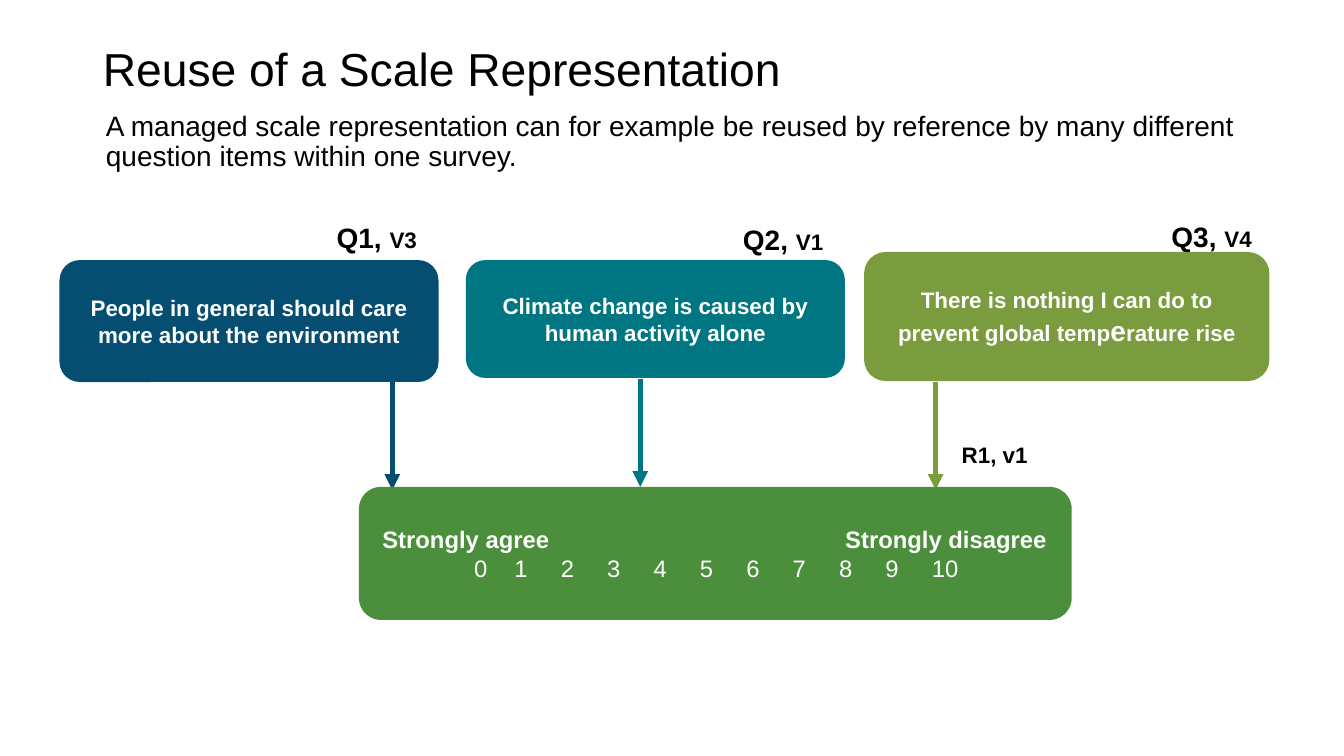
from dataclasses import dataclass

from lxml import etree
from pptx import Presentation, util as u
from pptx.dml.color import RGBColor
from pptx.enum import shapes, text
from pptx.oxml import ns

INK = {
    "black": "000000",
    "white": "FFFFFF",
    "navy": "054E72",
    "teal": "007682",
    "olive": "7B9C3E",
    "green": "4B8E3C",
}
FACE = "Arial"
Area = tuple[float, float, float, float]
Runs = list[tuple[str, float]]


@dataclass
class Arrow:
    x: float
    top: float
    end: float
    ink: str


@dataclass
class Label:
    area: Area
    runs: Runs


@dataclass
class Box:
    area: Area
    ink: str
    runs: Runs


ARROWS = [
    Arrow(3.89, 3.78, 4.86, "navy"),
    Arrow(6.35, 3.76, 4.83, "teal"),
    Arrow(9.28, 3.79, 4.86, "olive"),
]
LABELS = [
    Label((11.52, 2.13, 1.23, 0.45), [("Q3, ", 20), ("V4", 16)]),
    Label((3.24, 2.14, 1.16, 0.45), [("Q1, ", 20), ("V3", 16)]),
    Label((7.27, 2.16, 1.67, 0.45), [("Q2, ", 20), ("V1", 16)]),
    Label((9.44, 4.33, 2.08, 0.45), [("R1, v1", 16)]),
]
SCALE = Box((3.56, 4.83, 7.07, 1.32), "green", [])
ITEMS = [
    Box((0.59, 2.58, 3.76, 1.21), "navy",
        [("People in general should care more about the environment", 16)]),
    Box((8.57, 2.5, 4.02, 1.28), "olive",
        [("There is nothing I can do to prevent global temp", 16),
         ("e", 20), ("rature rise", 16)]),
    Box((4.62, 2.58, 3.76, 1.17), "teal",
        [("Climate change is caused by human activity alone", 16)]),
]


def color(name: str) -> RGBColor:
    return RGBColor.from_string(INK[name])


def place(area: Area) -> list[u.Length]:
    return [u.Inches(side) for side in area]


def style(para, size: float, ink: str, bold: bool = False) -> None:
    font = para.font
    font.name, font.size, font.bold = FACE, u.Pt(size), bold
    font.color.rgb = color(ink)


def write(para, runs: Runs, ink: str) -> None:
    base = runs[0][1]
    style(para, base, ink, True)
    for words, size in runs:
        run = para.add_run()
        run.text = words
        if size != base:
            run.font.size = u.Pt(size)


def add_tabs(para, stops: list[tuple[float, str]]) -> None:
    tabs = etree.SubElement(para._p.get_or_add_pPr(), ns.qn("a:tabLst"))
    for spot, side in stops:
        etree.SubElement(tabs, ns.qn("a:tab"),
                         pos=str(u.Inches(spot)), algn=side)


def fill_head(shape, area: Area, words: str, size: float):
    shape.left, shape.top, shape.width, shape.height = place(area)
    frame = shape.text_frame
    frame.text = words
    frame.word_wrap = True
    frame.auto_size = text.MSO_AUTO_SIZE.NONE
    para = frame.paragraphs[0]
    para.alignment = text.PP_ALIGN.LEFT
    para.line_spacing = 0.9
    para.space_before = u.Pt(0)
    return para


def draw_arrow(slide, arrow: Arrow) -> None:
    x = u.Inches(arrow.x)
    line = slide.shapes.add_connector(
        shapes.MSO_CONNECTOR.STRAIGHT,
        x, u.Inches(arrow.top), x, u.Inches(arrow.end))
    line.line.color.rgb = color(arrow.ink)
    line.line.width = u.Pt(3.75)
    etree.SubElement(line.line._get_or_add_ln(), ns.qn("a:tailEnd"),
                     type="triangle")
    etree.SubElement(line._element.spPr, ns.qn("a:effectLst"))


def draw_label(slide, label: Label) -> None:
    frame = slide.shapes.add_textbox(*place(label.area)).text_frame
    frame.word_wrap = True
    write(frame.paragraphs[0], label.runs, "black")


def draw_box(slide, box: Box):
    shape = slide.shapes.add_shape(
        shapes.MSO_SHAPE.ROUNDED_RECTANGLE, *place(box.area))
    shape.shadow.inherit = False
    shape.fill.solid()
    shape.fill.fore_color.rgb = color(box.ink)
    shape.line.fill.background()
    frame = shape.text_frame
    frame.word_wrap = True
    frame.vertical_anchor = text.MSO_ANCHOR.MIDDLE
    return frame


def draw_item(slide, box: Box) -> None:
    para = draw_box(slide, box).paragraphs[0]
    para.alignment = text.PP_ALIGN.CENTER
    write(para, box.runs, "white")


def draw_scale(slide) -> None:
    frame = draw_box(slide, SCALE)
    ends, marks = frame.paragraphs[0], frame.add_paragraph()
    rows = [
        (ends, ["Strongly agree", "Strongly disagree"],
         [(0.07, "l"), (6.66, "r")], True),
        (marks, [str(n) for n in range(11)],
         [(0.98, "l")] + [(1.38 + 0.46 * n, "l") for n in range(10)], False),
    ]
    for para, words, stops, bold in rows:
        para.alignment = text.PP_ALIGN.LEFT
        add_tabs(para, stops)
        style(para, 17, "white", bold)
        para.add_run().text = "".join("\t" + word for word in words)


def main() -> None:
    deck = Presentation()
    deck.slide_width, deck.slide_height = u.Inches(13.33), u.Inches(7.5)
    slide = deck.slides.add_slide(deck.slide_layouts[1])

    title = fill_head(slide.shapes.title, (0.92, 0.4, 11.5, 0.62),
                      "Reuse of a Scale Representation", 33)
    style(title, 33, "black")
    body = fill_head(
        slide.placeholders[1], (0.95, 1.06, 11.5, 0.83),
        "A managed scale representation can for example be reused by "
        "reference by many different question items within one survey.", 20)
    props = body._p.get_or_add_pPr()
    props.set("marL", "0")
    props.set("indent", "0")
    etree.SubElement(props, ns.qn("a:buNone"))
    style(body, 20, "black")

    for arrow in ARROWS:
        draw_arrow(slide, arrow)
    for label in LABELS:
        draw_label(slide, label)
    draw_scale(slide)
    for item in ITEMS:
        draw_item(slide, item)
    deck.save("out.pptx")


if __name__ == "__main__":
    main()
